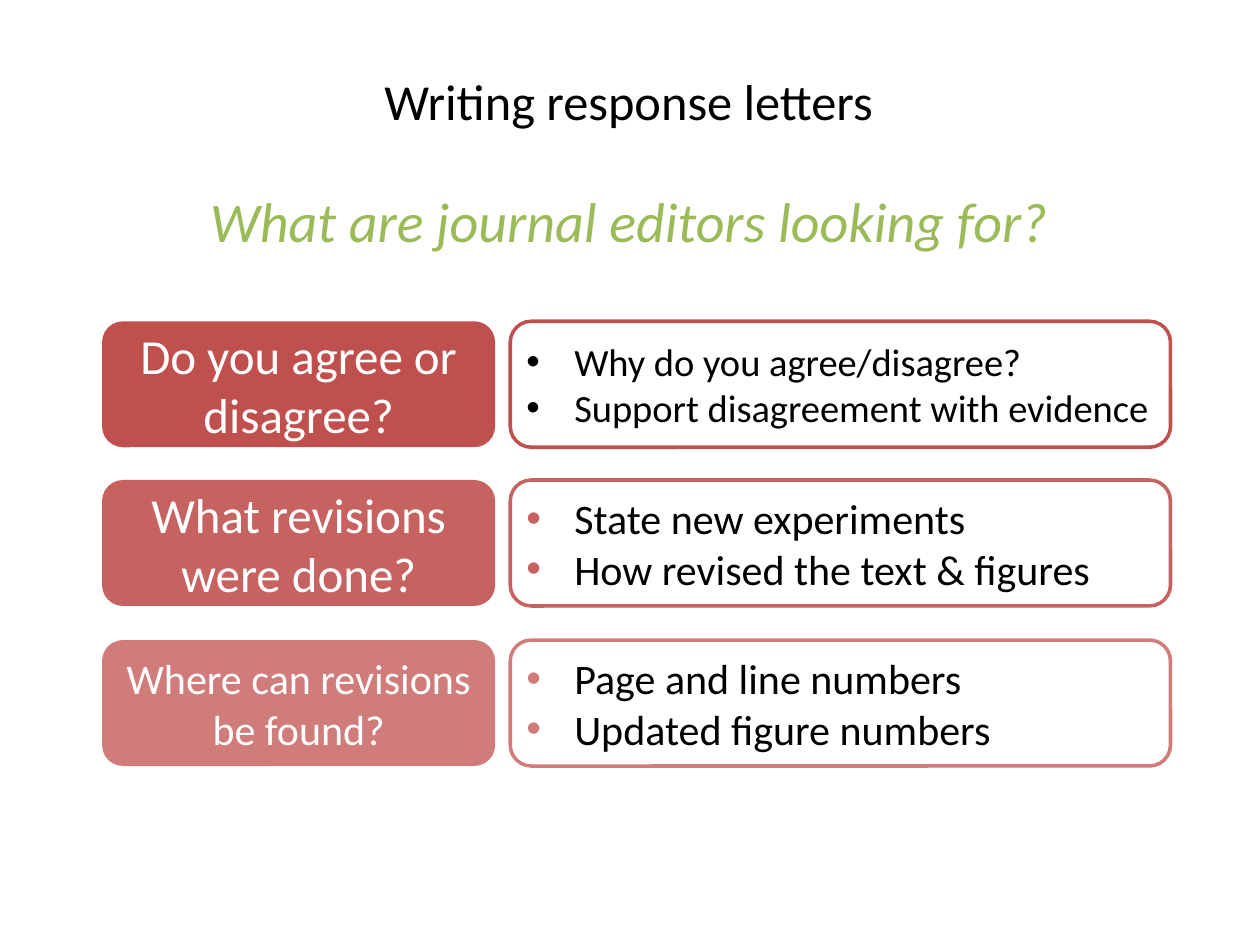
"""Build a slide on what journal editors look for in response letters."""
from lxml import etree
from pptx import Presentation
from pptx.dml.color import RGBColor
from pptx.enum.shapes import MSO_SHAPE
from pptx.enum.text import MSO_ANCHOR, MSO_AUTO_SIZE, PP_ALIGN
from pptx.oxml.ns import qn
from pptx.util import Inches, Pt

ROUNDED = MSO_SHAPE.ROUNDED_RECTANGLE
MIDDLE = MSO_ANCHOR.MIDDLE
NO_FIT = MSO_AUTO_SIZE.NONE
CENTER = PP_ALIGN.CENTER
LEFT = PP_ALIGN.LEFT

COLORS = {
    "black": "000000",
    "white": "FFFFFF",
    "green": "9BBB59",
    "red": "C0504D",
    "mid_red": "C6625F",
    "light_red": "D07C7A",
}

ROWS = [
    ("red", "Do you agree or disagree?", 28, "black", 22,
     ["Why do you agree/disagree?", "Support disagreement with evidence"]),
    ("mid_red", "What revisions were done?", 28, "mid_red", 24,
     ["State new experiments", "How revised the text & figures"]),
    ("light_red", "Where can revisions be found?", 24, "light_red", 24,
     ["Page and line numbers", "Updated figure numbers"]),
]
ROW_TOP, ROW_PITCH, ROW_HEIGHT = 2.55, 1.265, 1
QUESTION_LEFT, QUESTION_WIDTH = 0.81, 3.12
ANSWER_LEFT, ANSWER_WIDTH = 4.05, 5.24


class SlideBuilder:
    """Hold the style and the current slide."""

    font = "Calibri"
    inset = Inches(0.08)
    indent = Inches(0.38)

    def __init__(self, presentation):
        self.slide = presentation.slides.add_slide(presentation.slide_layouts[5])

    def color(self, name):
        return RGBColor.from_string(COLORS[name])

    def fill_text(self, shape, lines, size, color, align=CENTER, italic=None):
        frame = shape.text_frame
        frame.text = "\n".join(lines)
        frame.word_wrap = True
        frame.auto_size = NO_FIT
        for paragraph in frame.paragraphs:
            paragraph.alignment = align
            for run in paragraph.runs:
                run.font.name = self.font
                run.font.size = Pt(size)
                run.font.italic = italic
                run.font.color.rgb = self.color(color)
        return frame

    def set_insets(self, frame):
        frame.margin_left = frame.margin_right = self.inset
        frame.margin_top = frame.margin_bottom = self.inset

    def title(self, text, left, top, width, height, size):
        shape = self.slide.shapes.title
        shape.left, shape.top = Inches(left), Inches(top)
        shape.width, shape.height = Inches(width), Inches(height)
        self.fill_text(shape, [text], size, "black").vertical_anchor = MIDDLE

    def subtitle(self, text, left, top, width, height, size):
        shape = self.slide.shapes.add_textbox(
            Inches(left), Inches(top), Inches(width), Inches(height))
        self.set_insets(self.fill_text(shape, [text], size, "green", italic=True))

    def box(self, left, top, width, fill, line=None):
        shape = self.slide.shapes.add_shape(
            ROUNDED, Inches(left), Inches(top), Inches(width), Inches(ROW_HEIGHT))
        shape.shadow.inherit = False
        shape.fill.solid()
        shape.fill.fore_color.rgb = self.color(fill)
        if line:
            shape.line.color.rgb = self.color(line)
            shape.line.width = Pt(2)
        else:
            shape.line.fill.background()
        self.set_insets(shape.text_frame)
        shape.text_frame.vertical_anchor = MIDDLE
        return shape

    def question(self, text, top, fill, size):
        shape = self.box(QUESTION_LEFT, top, QUESTION_WIDTH, fill)
        self.fill_text(shape, [text], size, "white")

    def answers(self, lines, top, line, bullet, size):
        shape = self.box(ANSWER_LEFT, top, ANSWER_WIDTH, "white", line)
        frame = self.fill_text(shape, lines, size, "black", LEFT)
        for paragraph in frame.paragraphs:
            self.bullet(paragraph, bullet)

    def bullet(self, paragraph, color):
        properties = paragraph._p.get_or_add_pPr()
        properties.set("marL", str(self.indent))
        properties.set("indent", str(-self.indent))
        bullet_color = etree.SubElement(properties, qn("a:buClr"))
        etree.SubElement(bullet_color, qn("a:srgbClr"), val=COLORS[color])
        etree.SubElement(properties, qn("a:buFont"), typeface="Arial")
        etree.SubElement(properties, qn("a:buChar"), char="•")


def main():
    presentation = Presentation()
    presentation.slide_width = Inches(10)
    presentation.slide_height = Inches(7.5)
    builder = SlideBuilder(presentation)
    builder.title("Writing response letters", 0.83, 0.59, 8.32, 0.41, 28.8)
    builder.subtitle("What are journal editors looking for?", 1.06, 1.4, 7.87, 0.7, 32)
    for index, (color, question, size, bullet, answer_size, answers) in enumerate(ROWS):
        top = round(ROW_TOP + index * ROW_PITCH, 2)
        builder.question(question, top, color, size)
        builder.answers(answers, top, color, bullet, answer_size)
    presentation.save("out.pptx")


if __name__ == "__main__":
    main()
